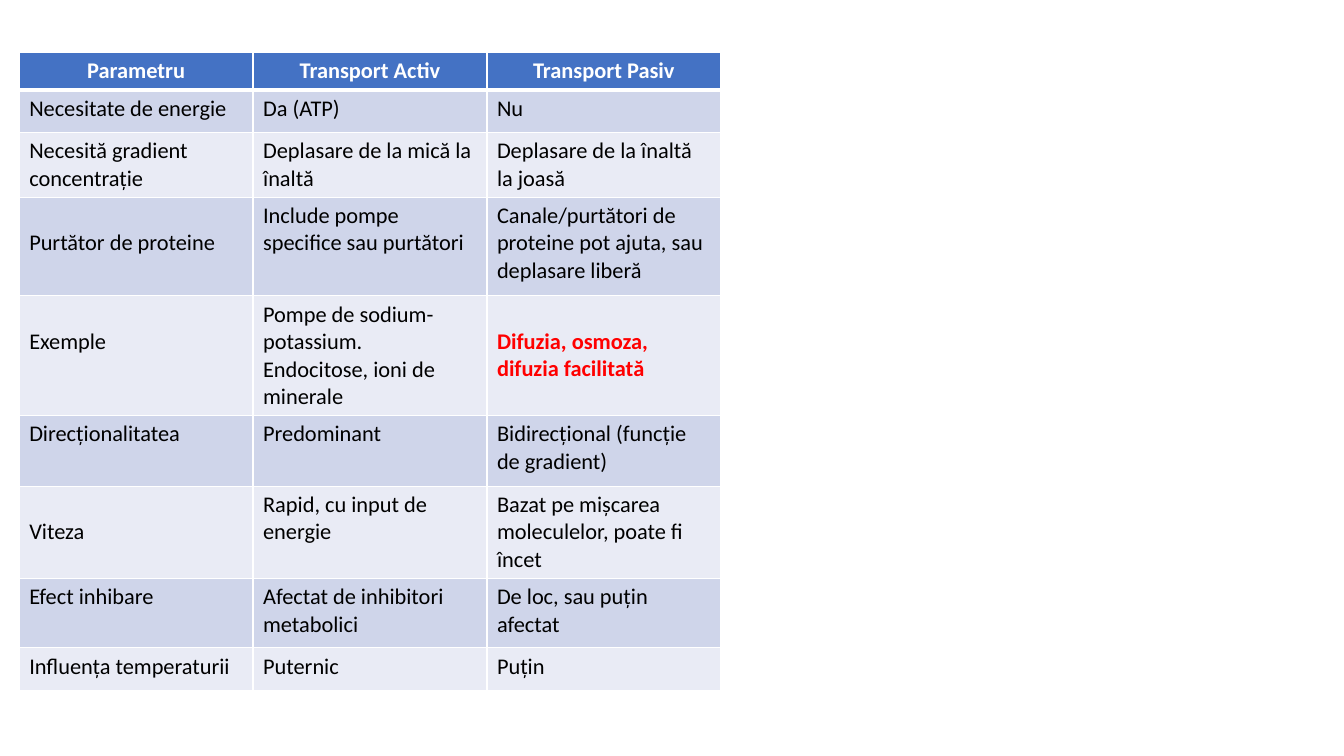
from lxml import etree
from pptx import Presentation
from pptx.dml.color import RGBColor
from pptx.enum.text import PP_ALIGN
from pptx.oxml.ns import qn
from pptx.util import Inches, Pt

CENTER, LEFT = PP_ALIGN.CENTER, PP_ALIGN.LEFT
COLORS = {"header": "4472C4", "odd": "CFD5EA", "even": "E9EBF5",
          "white": "FFFFFF", "black": "000000", "red": "FF0000"}
COLUMN_WIDTH = 2.32
TOP_MARGIN = 0.05
LINE_HEIGHT = 0.27

# Row height in inches, then the three cell texts
ROWS = [
    (0.36, "Parametru", "Transport Activ", "Transport Pasiv"),
    (0.42, "Necesitate de energie", "Da (ATP)", "Nu"),
    (0.64, "Necesită gradient concentrație", "Deplasare de la mică la înaltă",
     "Deplasare de la înaltă la joasă"),
    (0.98, "Purtător de proteine", "Include pompe specifice sau purtători",
     "Canale/purtători de proteine pot ajuta, sau deplasare liberă"),
    (1.18, "Exemple", "Pompe de sodium-potassium.\nEndocitose, ioni de minerale",
     "Difuzia, osmoza, difuzia facilitată"),
    (0.70, "Direcționalitatea", "Predominant", "Bidirecțional (funcție de gradient)"),
    (0.91, "Viteza", "Rapid, cu input de energie",
     "Bazat pe mișcarea moleculelor, poate fi încet"),
    (0.69, "Efect inhibare", "Afectat de inhibitori metabolici", "De loc, sau puțin afectat"),
    (0.42, "Influența temperaturii", "Puternic", "Puțin"),
]
LOWERED = {"Purtător de proteine", "Exemple", "Viteza", "Difuzia, osmoza, difuzia facilitată"}
HIGHLIGHTED = "Difuzia, osmoza, difuzia facilitată"


def write_cell(cell, text, fill, color="black", bold=False, align=LEFT, lowered=False):
    """Fill a cell and set its text, one line lower if asked."""
    cell.fill.solid()
    cell.fill.fore_color.rgb = RGBColor.from_string(COLORS[fill])
    cell.margin_top = Inches(TOP_MARGIN + LINE_HEIGHT * lowered)
    cell.text_frame.text = text
    for paragraph in cell.text_frame.paragraphs:
        paragraph.alignment = align
        for run in paragraph.runs:
            run.font.name = "Calibri"
            run.font.size = Pt(16)
            run.font.bold = bold
            run.font.color.rgb = RGBColor.from_string(COLORS[color])


def set_borders(cell, top=1, bottom=1):
    """Draw white borders; widths are in points."""
    widths = {"a:lnL": 1, "a:lnR": 1, "a:lnT": top, "a:lnB": bottom}
    properties = cell._tc.get_or_add_tcPr()
    for position, (tag, width) in enumerate(widths.items()):
        line = etree.Element(qn(tag), w=str(Pt(width)))
        fill = etree.SubElement(line, qn("a:solidFill"))
        etree.SubElement(fill, qn("a:srgbClr"), val=COLORS["white"])
        properties.insert(position, line)


presentation = Presentation()
presentation.slide_width = Inches(13.33)
presentation.slide_height = Inches(7.5)
slide = presentation.slides.add_slide(presentation.slide_layouts[6])

table = slide.shapes.add_table(
    len(ROWS), 3, Inches(0.19), Inches(0.52),
    Inches(3 * COLUMN_WIDTH), Inches(sum(row[0] for row in ROWS))).table
for column in table.columns:
    column.width = Inches(COLUMN_WIDTH)

for row_index, (height, *texts) in enumerate(ROWS):
    table.rows[row_index].height = Inches(height)
    for column_index, text in enumerate(texts):
        cell = table.cell(row_index, column_index)
        if row_index == 0:
            write_cell(cell, text, "header", color="white", bold=True, align=CENTER)
        else:
            highlighted = text == HIGHLIGHTED
            write_cell(cell, text, "odd" if row_index % 2 else "even",
                       color="red" if highlighted else "black",
                       bold=highlighted, lowered=text in LOWERED)
        set_borders(cell, top=3 if row_index == 1 else 1, bottom=3 if row_index == 0 else 1)

presentation.save("out.pptx")
